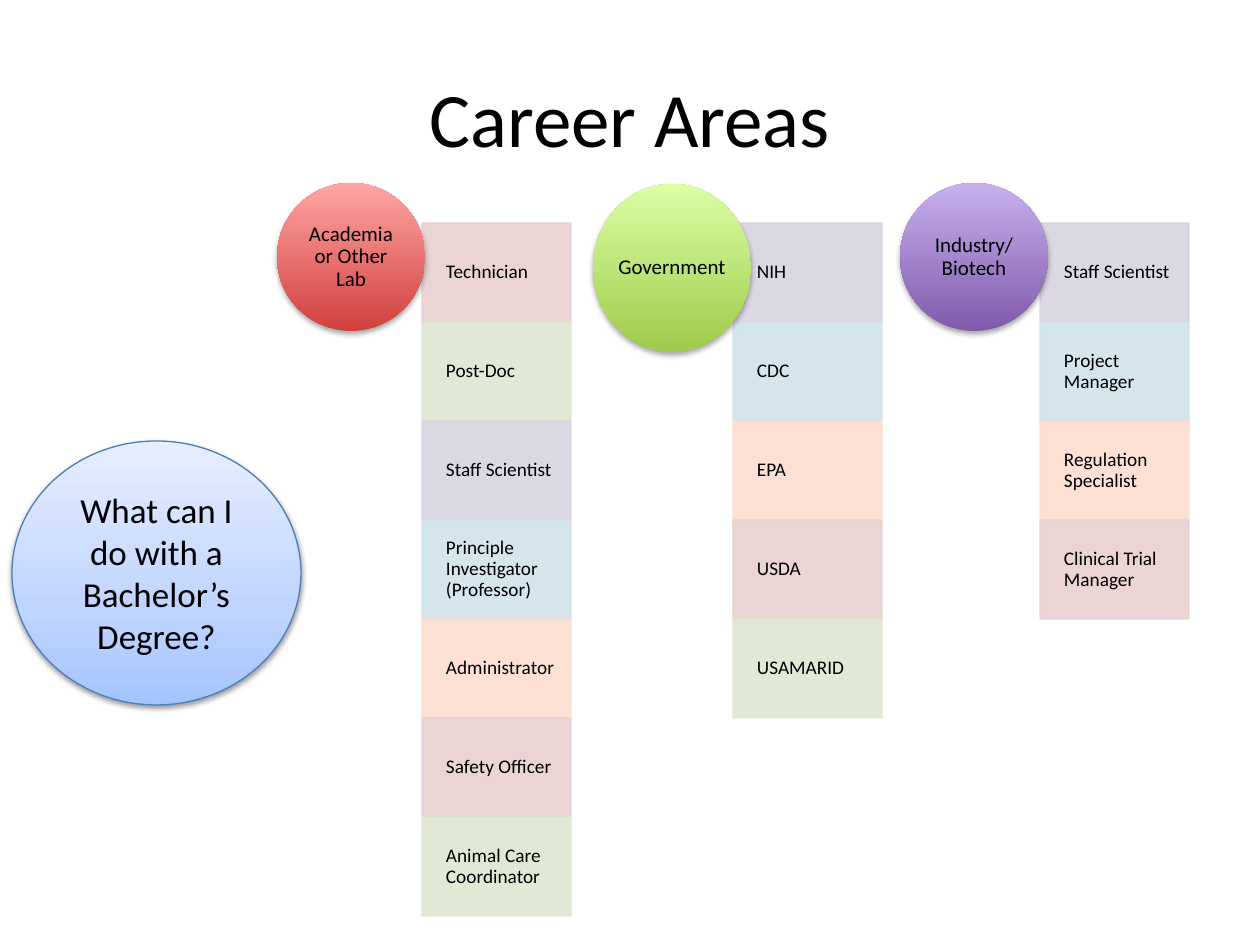
from lxml.etree import SubElement
from pptx import Presentation
from pptx.dml.color import RGBColor
from pptx.enum.shapes import MSO_SHAPE as Shape
from pptx.enum.text import MSO_ANCHOR as Anchor, PP_ALIGN as Align
from pptx.oxml.ns import qn
from pptx.util import Pt

SCALE = 914400 / 126
COLORS = {
    "black": "000000", "outline": "4B7EBC",
    "rose": "E8D0D0", "green": "DEE7D1", "lilac": "D8D3E0",
    "blue": "D0E3EA", "peach": "FCDDCF",
}
CYCLE = ["rose", "green", "lilac", "blue", "peach"]
QUESTION_STOPS = [(0, "A4C4FF"), (35, "BFD4FF"), (100, "E6EEFF")]
ROW_LEFT, ROW_TOP, ROW_WIDTH, ROW_HEIGHT = 422, 223, 149, 99
CAREERS = [
    {"name": "Academia or Other Lab", "left": ROW_LEFT, "first": 0,
     "circle": (277, 183, 148, 148), "stops": [(0, "D1403C"), (100, "FFA6A5")],
     "rows": ["Technician", "Post-Doc", "Staff Scientist",
              "Principle Investigator (Professor)", "Administrator",
              "Safety Officer", "Animal Care Coordinator"]},
    {"name": "Government", "left": 733, "first": 2,
     "circle": (593, 184, 158, 168), "stops": [(0, "A0CA4A"), (100, "DAFFA5")],
     "rows": ["NIH", "CDC", "EPA", "USDA", "USAMARID"]},
    {"name": "Industry/Biotech", "left": 1040, "first": 2,
     "circle": (900, 183, 148, 148), "stops": [(0, "7F5BAB"), (100, "C8B0ED")],
     "rows": ["Staff Scientist", "Project Manager",
              "Regulation Specialist", "Clinical Trial Manager"]},
]


def add_label(kind, box, text, size, align, spacing, insets):
    shape = slide.shapes.add_shape(kind, *[round(value * SCALE) for value in box])
    shape.shadow.inherit = False
    frame = shape.text_frame
    frame.text = text
    frame.word_wrap = True
    frame.vertical_anchor = Anchor.MIDDLE
    for side, inset in zip(("left", "top", "right", "bottom"), insets):
        setattr(frame, f"margin_{side}", round(inset * SCALE))
    paragraph = frame.paragraphs[0]
    for name, value in {"alignment": align, "line_spacing": spacing}.items():
        setattr(paragraph, name, value)
    font = paragraph.runs[0].font
    for name, value in {"name": "Calibri", "size": Pt(size)}.items():
        setattr(font, name, value)
    font.color.rgb = RGBColor.from_string(COLORS["black"])
    return shape


def add_gradient_and_shadow(shape, stops, opacity, distance):
    shape.fill.gradient()
    shape.fill.gradient_angle = 90
    properties = shape._element.spPr
    stop_list = properties.find(qn("a:gradFill")).find(qn("a:gsLst"))
    for old_stop in list(stop_list):
        stop_list.remove(old_stop)
    for position, color in stops:
        stop = SubElement(stop_list, qn("a:gs"), pos=str(position * 1000))
        SubElement(stop, qn("a:srgbClr"), val=color)
    shadow = SubElement(properties.find(qn("a:effectLst")), qn("a:outerShdw"),
                        blurRad="40000", dist=str(distance), dir="5400000", rotWithShape="0")
    shade = SubElement(shadow, qn("a:srgbClr"), val=COLORS["black"])
    SubElement(shade, qn("a:alpha"), val=str(opacity * 1000))


presentation = Presentation()
presentation.slide_width = round(1260 * SCALE)
presentation.slide_height = round(945 * SCALE)
slide = presentation.slides.add_slide(presentation.slide_layouts[5])

title = slide.shapes.title
for name, value in {"left": 63, "top": 38, "width": 1134, "height": 158}.items():
    setattr(title, name, round(value * SCALE))
title.text_frame.text = "Career Areas"
title.text_frame.vertical_anchor = Anchor.MIDDLE
title_paragraph = title.text_frame.paragraphs[0]
title_paragraph.alignment = Align.CENTER
for name, value in {"name": "Calibri", "size": Pt(44)}.items():
    setattr(title_paragraph.runs[0].font, name, value)
title_paragraph.runs[0].font.color.rgb = RGBColor.from_string(COLORS["black"])

for career in CAREERS:
    for index, text in enumerate(career["rows"]):
        box = (career["left"], ROW_TOP + index * ROW_HEIGHT, ROW_WIDTH, ROW_HEIGHT)
        row = add_label(Shape.RECTANGLE, box, text, 11, Align.LEFT, 0.9, (24, 11, 11, 11))
        color = RGBColor.from_string(COLORS[CYCLE[(career["first"] + index) % len(CYCLE)]])
        row.fill.solid()
        row.fill.fore_color.rgb = color
        row.line.color.rgb = color
        row.line.width = Pt(0.75)
        properties = row._element.spPr
        for color_element in properties.iter(qn("a:srgbClr")):
            SubElement(color_element, qn("a:alpha"), val="90000")
    circle = add_label(Shape.OVAL, career["circle"], career["name"], 12,
                       Align.CENTER, 0.9, (0, 0, 0, 0))
    circle.line.fill.background()
    add_gradient_and_shadow(circle, career["stops"], 35, 23000)

question = add_label(Shape.OVAL, (12, 441, 289, 264), "What can I do with a Bachelor’s Degree?",
                     20, Align.CENTER, 1.0, (13, 6, 13, 6))
question.line.color.rgb = RGBColor.from_string(COLORS["outline"])
question.line.width = Pt(0.75)
add_gradient_and_shadow(question, QUESTION_STOPS, 38, 20000)

presentation.save("out.pptx")
